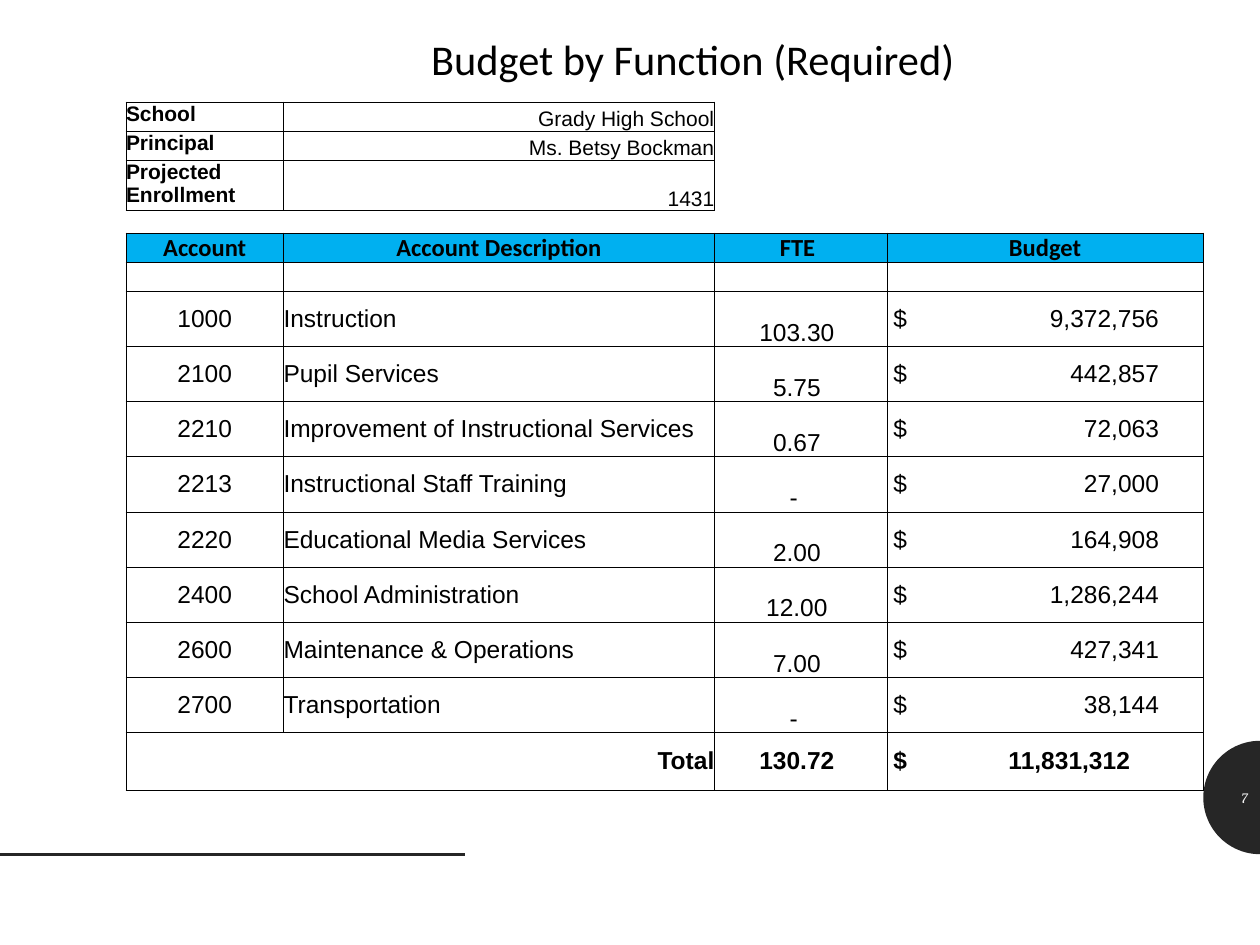
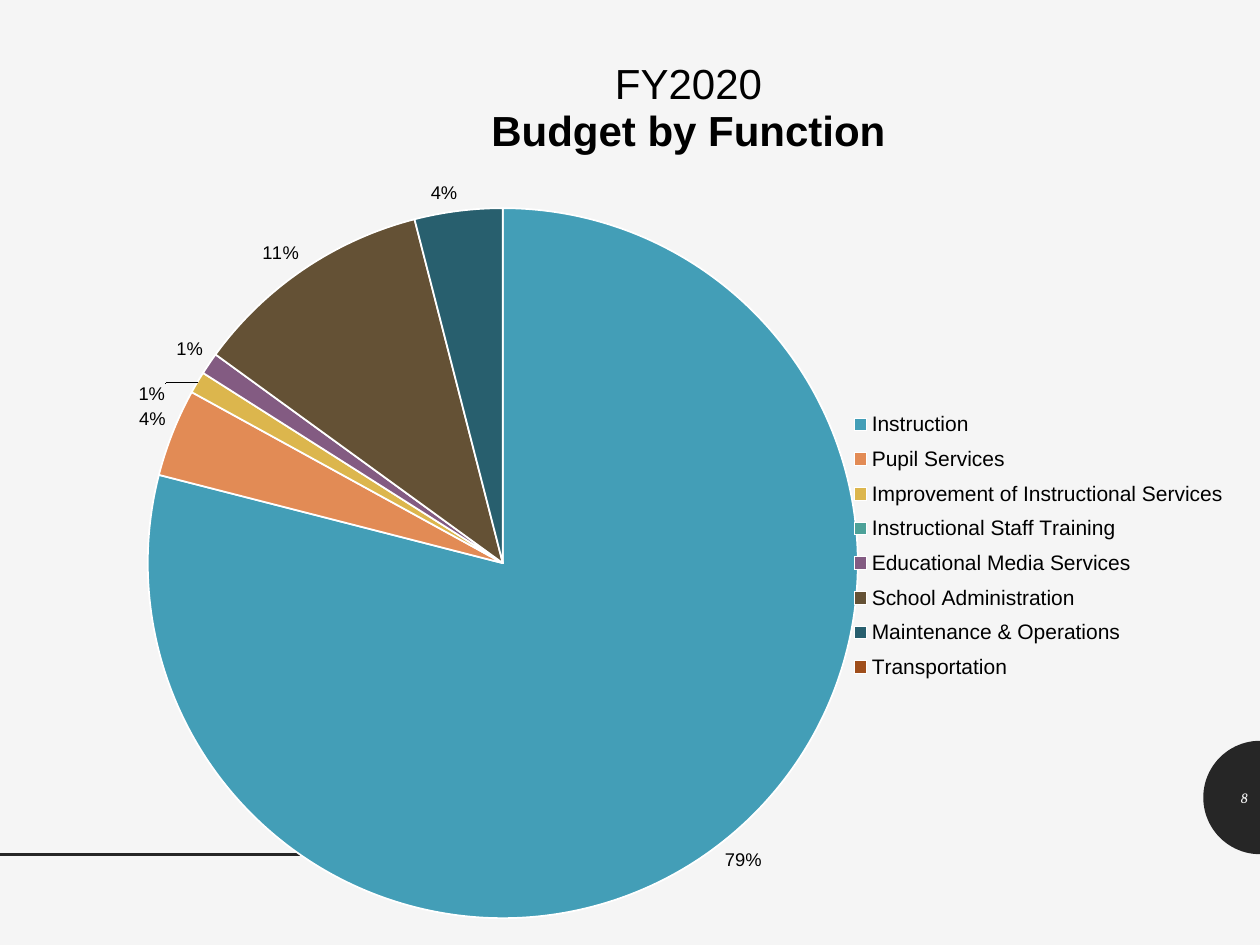
"""Build two budget slides: a table by function and a pie of the same figures."""
from math import cos, pi, sin

from lxml import etree
from pptx import Presentation
from pptx.chart.data import CategoryChartData
from pptx.dml.color import RGBColor
from pptx.enum.chart import XL_CHART_TYPE, XL_LABEL_POSITION, XL_LEGEND_POSITION
from pptx.enum.shapes import MSO_CONNECTOR
from pptx.enum.text import MSO_ANCHOR, PP_ALIGN
from pptx.oxml.ns import qn
from pptx.util import Inches, Pt

BLACK = RGBColor(0x00, 0x00, 0x00)
WHITE = RGBColor(0xFF, 0xFF, 0xFF)
CHARCOAL = RGBColor(0x26, 0x26, 0x26)
PALE = RGBColor(0xF5, 0xF5, 0xF5)
HEADER_BLUE = RGBColor(0x00, 0xB0, 0xF0)
SLICE_COLOURS = [RGBColor.from_string(code) for code in (
    "439EB7", "E28B55", "DCB64D", "4CA198", "835B82", "645135", "285F6E", "9F4E1B")]

LEFT, CENTER, RIGHT = PP_ALIGN.LEFT, PP_ALIGN.CENTER, PP_ALIGN.RIGHT
TOP, MIDDLE, BOTTOM = MSO_ANCHOR.TOP, MSO_ANCHOR.MIDDLE, MSO_ANCHOR.BOTTOM
STRAIGHT = MSO_CONNECTOR.STRAIGHT
PIE = XL_CHART_TYPE.PIE
OUTSIDE_END = XL_LABEL_POSITION.OUTSIDE_END
LEGEND_RIGHT = XL_LEGEND_POSITION.RIGHT

TITLE_ONLY, BLANK = 5, 6
SCHOOL_FACTS = [
    ("School", "Grady High School"),
    ("Principal", "Ms. Betsy Bockman"),
    ("Projected Enrollment", "1431"),
]
HEADINGS = ["Account", "Account Description", "FTE", "Budget"]
ACCOUNTS = [
    ("1000", "Instruction", "103.30", 9372756),
    ("2100", "Pupil Services", "5.75", 442857),
    ("2210", "Improvement of Instructional Services", "0.67", 72063),
    ("2213", "Instructional Staff Training", "-", 27000),
    ("2220", "Educational Media Services", "2.00", 164908),
    ("2400", "School Administration", "12.00", 1286244),
    ("2600", "Maintenance & Operations", "7.00", 427341),
    ("2700", "Transportation", "-", 38144),
]
TOTAL_FTE, TOTAL_BUDGET = "130.72", 11831312
COLUMN_WIDTHS = [1.25, 3.42, 1.37, 2.51]
ACCOUNTS_HEIGHT = 3.5
ROW_HEIGHTS = ([0.23, 0.23, 0.37, 0.18, 0.23, 0.23]
               + [ACCOUNTS_HEIGHT / len(ACCOUNTS)] * len(ACCOUNTS) + [0.46])
GAP_ROW, HEADER_ROW, FIRST_ACCOUNT_ROW = 3, 4, 6
LABEL_SHIFTS = {2: (-0.2, 0.2), 3: (-0.08, 0.14)}


def style_font(font, size, name, bold=False, colour=BLACK):
    """Apply size, face, weight and colour to a font."""
    font.size, font.name, font.bold = Pt(size), name, bold
    font.color.rgb = colour


def add_half_disc(slide, center_x, center_y, radius, steps=48):
    """Draw the left half of a disc whose flat side lies on center_x."""
    angles = [pi / 2 + pi * step / steps for step in range(steps + 1)]
    points = [(Inches(center_x + radius * cos(angle)), Inches(center_y - radius * sin(angle)))
              for angle in angles]
    builder = slide.shapes.build_freeform(*points[0])
    builder.add_line_segments(points[1:], close=True)
    disc = builder.convert_to_shape()
    disc.shadow.inherit = False
    disc.fill.solid()
    disc.fill.fore_color.rgb = CHARCOAL
    disc.line.fill.background()


def add_slide(deck, layout_index, background, number):
    """Add a slide with the shared background, rule and numbered half disc."""
    slide = deck.slides.add_slide(deck.slide_layouts[layout_index])
    slide.background.fill.solid()
    slide.background.fill.fore_color.rgb = background
    add_half_disc(slide, 10, 6.33, 0.45)
    rule = slide.shapes.add_connector(STRAIGHT, 0, Inches(6.78), Inches(3.69), Inches(6.78))
    rule.line.color.rgb = CHARCOAL
    rule.line.width = Pt(2)
    etree.SubElement(rule._element.spPr, qn("a:effectLst"))
    box = slide.shapes.add_textbox(Inches(9.55), Inches(6.13), Inches(0.45), Inches(0.4))
    frame = box.text_frame
    frame.word_wrap = True
    frame.vertical_anchor = MIDDLE
    frame.text = str(number)
    para = frame.paragraphs[0]
    para.alignment = RIGHT
    style_font(para.runs[0].font, 8.2, "Cambria", colour=PALE)
    para.runs[0].font.italic = True
    return slide


def set_title(slide, text, left, top, width, height):
    """Move and format the title placeholder."""
    title = slide.shapes.title
    title.left, title.top = Inches(left), Inches(top)
    title.width, title.height = Inches(width), Inches(height)
    frame = title.text_frame
    frame.text = text
    frame.vertical_anchor = MIDDLE
    para = frame.paragraphs[0]
    para.alignment = CENTER
    para.line_spacing = 0.8
    style_font(para.runs[0].font, 24.2, "Calibri")


def is_boxed(row, column):
    """Tell whether a table position belongs to one of the ruled blocks."""
    return row > GAP_ROW or (row < GAP_ROW and column < 2)


def rule_cell(cell, row, column):
    """Draw each edge that this cell or its neighbour needs."""
    neighbours = {"lnL": (row, column - 1), "lnR": (row, column + 1),
                  "lnT": (row - 1, column), "lnB": (row + 1, column)}
    properties = cell._tc.get_or_add_tcPr()
    for position, (tag, neighbour) in enumerate(neighbours.items()):
        edge = etree.Element(qn(f"a:{tag}"), w=str(Pt(0.5)))
        if is_boxed(row, column) or is_boxed(*neighbour):
            fill = etree.SubElement(edge, qn("a:solidFill"))
            etree.SubElement(fill, qn("a:srgbClr"), val=str(BLACK))
        else:
            etree.SubElement(edge, qn("a:noFill"))
        properties.insert(position, edge)


def prepare_cell(cell, row, column):
    """Set the fill, margins, borders and empty-line size of a cell."""
    cell.margin_left = cell.margin_right = cell.margin_top = cell.margin_bottom = 0
    if is_boxed(row, column):
        cell.fill.solid()
        cell.fill.fore_color.rgb = HEADER_BLUE if row == HEADER_ROW else WHITE
    else:
        cell.fill.background()
    rule_cell(cell, row, column)
    etree.SubElement(cell.text_frame.paragraphs[0]._p, qn("a:endParaRPr"), sz="800")


def write_cell(cell, text, align, anchor, size=14, name="Arial", bold=False):
    """Write one line of formatted text in a cell."""
    cell.vertical_anchor = anchor
    para = cell.text_frame.paragraphs[0]
    para.text = text
    para.alignment = align
    style_font(para.runs[0].font, size, name, bold)


def write_fte(cell, text, anchor, bold=False):
    """Write a staffing figure, centred a little left of the middle."""
    cell.margin_right = Inches(0.11 if text == "-" else 0.06)
    write_cell(cell, text, CENTER, anchor, bold=bold)


def write_amount(cell, amount, right_stop, bold=False):
    """Write a dollar sign at the left and the amount against a right tab."""
    properties = cell.text_frame.paragraphs[0]._p.get_or_add_pPr()
    tabs = etree.SubElement(properties, qn("a:tabLst"))
    etree.SubElement(tabs, qn("a:tab"), pos=str(Inches(right_stop)), algn="r")
    cell.margin_left = Inches(0.05)
    write_cell(cell, f"$\t{amount:,}", LEFT, MIDDLE, bold=bold)


def add_budget_table(slide, left, top):
    """Add the school facts and the budget by account as one table."""
    frame = slide.shapes.add_table(
        len(ROW_HEIGHTS), len(COLUMN_WIDTHS), Inches(left), Inches(top),
        Inches(sum(COLUMN_WIDTHS)), Inches(sum(ROW_HEIGHTS)))
    table = frame.table
    table.first_row = table.horz_banding = False
    for column, width in zip(table.columns, COLUMN_WIDTHS):
        column.width = Inches(width)
    for row, height in enumerate(ROW_HEIGHTS):
        table.rows[row].height = Inches(height)
        for column in range(len(COLUMN_WIDTHS)):
            prepare_cell(table.cell(row, column), row, column)
    for row, (label, value) in enumerate(SCHOOL_FACTS):
        write_cell(table.cell(row, 0), label, LEFT, TOP, size=12, bold=True)
        write_cell(table.cell(row, 1), value, RIGHT, BOTTOM, size=12)
    for column, heading in enumerate(HEADINGS):
        write_cell(table.cell(HEADER_ROW, column), heading, CENTER, BOTTOM,
                   name="Calibri", bold=True)
    table.cell(HEADER_ROW, 2).margin_right = Inches(0.05)
    for row, (account, description, fte, budget) in enumerate(ACCOUNTS, FIRST_ACCOUNT_ROW):
        write_cell(table.cell(row, 0), account, CENTER, MIDDLE)
        write_cell(table.cell(row, 1), description, LEFT, MIDDLE)
        write_fte(table.cell(row, 2), fte, BOTTOM)
        write_amount(table.cell(row, 3), budget, 2.11)
    last = len(ROW_HEIGHTS) - 1
    table.cell(last, 0).merge(table.cell(last, 1))
    write_cell(table.cell(last, 0), "Total", RIGHT, MIDDLE, bold=True)
    write_fte(table.cell(last, 2), TOTAL_FTE, MIDDLE, bold=True)
    write_amount(table.cell(last, 3), TOTAL_BUDGET, 1.88, bold=True)


def manual_layout(target=None, mode="edge", **fractions):
    """Return a manual layout, in fractions of the chart."""
    layout = etree.Element(qn("c:layout"))
    manual = etree.SubElement(layout, qn("c:manualLayout"))
    settings = {"layoutTarget": target} if target else {}
    if mode:
        settings.update(xMode=mode, yMode=mode)
    settings.update({tag: f"{value:.3f}" for tag, value in fractions.items()})
    for tag, value in settings.items():
        etree.SubElement(manual, qn(f"c:{tag}"), val=value)
    return layout


def add_slice_labels(series, width, height):
    """Label each slice with its percentage and shift the crowded labels."""
    labels = series.data_labels
    labels.show_percentage, labels.show_value = True, False
    labels.number_format, labels.number_format_is_linked = "0%", False
    labels.position = OUTSIDE_END
    style_font(labels.font, 10.5, "Arial")
    for index, (shift_x, shift_y) in LABEL_SHIFTS.items():
        label = series.points[index].data_label
        label.position = OUTSIDE_END
        style_font(label.font, 10.5, "Arial")
        element = label._dLbl
        element.find(qn("c:showVal")).set("val", "0")
        element.find(qn("c:showPercent")).set("val", "1")
        element.find(qn("c:idx")).addnext(
            manual_layout(mode=None, x=shift_x / width, y=shift_y / height))


def add_budget_pie(slide, left, top, width, height):
    """Add the pie of budget by function with its title and legend."""
    data = CategoryChartData()
    data.categories = [description for _, description, _, _ in ACCOUNTS]
    data.add_series("Series 1", [round(100 * budget / TOTAL_BUDGET) for *_, budget in ACCOUNTS])
    chart = slide.shapes.add_chart(
        PIE, Inches(left), Inches(top), Inches(width), Inches(height), data).chart
    style_font(chart.font, 10, "Calibri")

    chart.has_title = True
    frame = chart.chart_title.text_frame
    frame.text = "FY2020\nBudget by Function"
    for para, bold in zip(frame.paragraphs, (False, True)):
        para.alignment = CENTER
        style_font(para.runs[0].font, 24, "Arial", bold)
    chart.has_legend = True
    chart.legend.position = LEGEND_RIGHT
    style_font(chart.legend.font, 12, "Arial")
    placements = [
        (chart.chart_title, {"x": 3.25 / width, "y": 0.19 / height}),
        (chart.legend, {"x": 6.07 / width, "y": 2.93 / height,
                        "w": 3.1 / width, "h": 2.3 / height}),
    ]
    for part, fractions in placements:
        part.include_in_layout = False
        element = part._element
        for old in element.findall(qn("c:layout")):
            element.remove(old)
        element.find(qn("c:overlay")).addprevious(manual_layout(**fractions))

    plot = chart.plots[0]
    plot.vary_by_categories = True
    area = plot._element.getparent()
    for old in area.findall(qn("c:layout")):
        area.remove(old)
    diameter = 5.64
    area.insert(0, manual_layout("inner", x=0.55 / width, y=1.4 / height,
                                 w=diameter / width, h=diameter / height))
    series = plot.series[0]
    for index, colour in enumerate(SLICE_COLOURS):
        piece = series.points[index].format
        piece.fill.solid()
        piece.fill.fore_color.rgb = colour
        piece.line.color.rgb = WHITE
        piece.line.width = Pt(1)
    add_slice_labels(series, width, height)


def main():
    """Build and save the deck."""
    deck = Presentation()
    deck.slide_width, deck.slide_height = Inches(10), Inches(7.5)
    table_slide = add_slide(deck, TITLE_ONLY, WHITE, 7)
    set_title(table_slide, "Budget by Function (Required)", 1, 0.29, 9, 0.43)
    add_budget_table(table_slide, 1, 0.81)
    pie_slide = add_slide(deck, BLANK, PALE, 8)
    add_budget_pie(pie_slide, 0.62, 0.25, 9.7, 7.19)
    deck.save("out.pptx")


if __name__ == "__main__":
    main()
